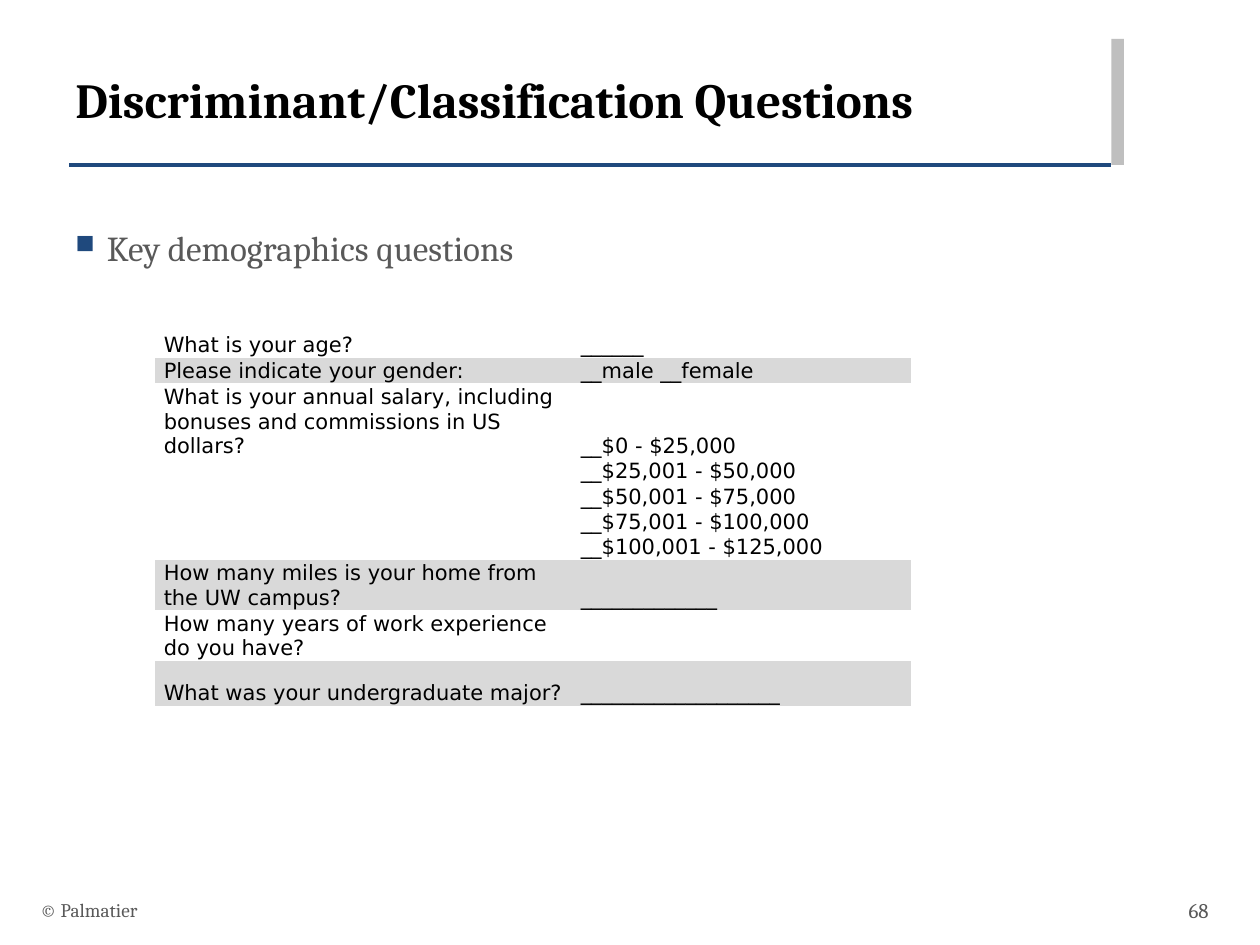
from lxml.etree import SubElement
from pptx import Presentation
from pptx.dml.color import RGBColor
from pptx.enum.shapes import MSO_CONNECTOR as LINE, MSO_SHAPE as SHAPE
from pptx.enum.text import MSO_ANCHOR as ANCHOR, PP_ALIGN as ALIGN
from pptx.oxml.ns import qn
from pptx.util import Inches, Pt

BLACK = RGBColor(0x00, 0x00, 0x00)
GRAY = RGBColor(0x59, 0x59, 0x59)
SILVER = RGBColor(0xBF, 0xBF, 0xBF)
BAND = RGBColor(0xD9, 0xD9, 0xD9)
NAVY = RGBColor(0x1F, 0x49, 0x7D)
PLAIN = "{2D5ABB26-0587-4C30-8999-92F81FD0307C}"


def add_run(para, text, size, color, face="Cambria", bold=False):
    run = para.add_run()
    run.text = text
    font = run.font
    font.name, font.size, font.bold = face, Pt(size), bold
    font.color.rgb = color


def add_box(left, top, width, height, anchor=ANCHOR.TOP):
    box = slide.shapes.add_textbox(Inches(left), Inches(top), Inches(width), Inches(height))
    frame = box.text_frame
    frame.word_wrap = True
    frame.vertical_anchor = anchor
    return frame.paragraphs[0]


deck = Presentation()
deck.slide_width, deck.slide_height = Inches(10), Inches(7.5)
slide = deck.slides.add_slide(deck.slide_layouts[6])

bar = slide.shapes.add_shape(SHAPE.RECTANGLE, Inches(8.82), Inches(0.31), Inches(0.1), Inches(1))
bar.shadow.inherit = False
bar.fill.solid()
bar.fill.fore_color.rgb = SILVER
bar.line.fill.background()

rule = slide.shapes.add_connector(LINE.STRAIGHT, Inches(0.55), Inches(1.31), Inches(8.82), Inches(1.31))
rule.line.color.rgb = NAVY
rule.line.width = Pt(2)
SubElement(rule._element.spPr, qn("a:effectLst"))

title = add_box(0.5, 0.5, 9, 0.92)
add_run(title, "Discriminant/Classification Questions", 28, BLACK, bold=True)

point = add_box(0.5, 1.75, 9, 4.95)
props = point._p.get_or_add_pPr()
props.set("marL", str(Inches(0.25)))
props.set("indent", str(-Inches(0.25)))
tint = SubElement(props, qn("a:buClr"))
SubElement(tint, qn("a:srgbClr")).set("val", str(NAVY))
SubElement(props, qn("a:buSzPct")).set("val", "75000")
SubElement(props, qn("a:buChar")).set("char", "■")
add_run(point, "Key demographics questions", 20, GRAY)

rows = [
    (0.18, "What is your age?", "______", False),
    (0.18, "Please indicate your gender:", "__male __female", True),
    (0.54, "What is your annual salary, including bonuses and commissions in US dollars?",
     "__$0 - $25,000", False),
    (0.18, "", "__$25,001 - $50,000", False),
    (0.18, "", "__$50,001 - $75,000", False),
    (0.18, "", "__$75,001 - $100,000", False),
    (0.18, "", "__$100,001 - $125,000", False),
    (0.36, "How many miles is your home from the UW campus?", "_" * 13, True),
    (0.36, "How many years of work experience do you have?", "", False),
    (0.36, "What was your undergraduate major?", "_" * 19, True),
]
grid = slide.shapes.add_table(len(rows), 2, Inches(1.23), Inches(2.64), Inches(6), Inches(2.7))
table = grid.table
table.first_row = table.horz_banding = False
table._tbl.tblPr.find(qn("a:tableStyleId")).text = PLAIN
for col, width in zip(table.columns, (3.31, 2.69)):
    col.width = Inches(width)
for row, (height, ask, reply, shaded) in zip(table.rows, rows):
    row.height = Inches(height)
    for cell, text in zip(row.cells, (ask, reply)):
        cell.margin_left = cell.margin_right = Inches(0.07)
        cell.margin_top = cell.margin_bottom = 0
        cell.vertical_anchor = ANCHOR.BOTTOM
        if shaded:
            cell.fill.solid()
            cell.fill.fore_color.rgb = BAND
        else:
            cell.fill.background()
        para = cell.text_frame.paragraphs[0]
        if text:
            add_run(para, text, 12, BLACK, "DejaVu Sans")
        else:
            SubElement(para._p, qn("a:endParaRPr")).set("sz", "1200")

foot = add_box(0.22, 7.02, 6.7, 0.4, ANCHOR.MIDDLE)
add_run(foot, "© Palmatier", 11, GRAY)
page = add_box(9.08, 7.02, 0.61, 0.4, ANCHOR.MIDDLE)
page.alignment = ALIGN.RIGHT
add_run(page, "68", 12, GRAY)

deck.save("out.pptx")
